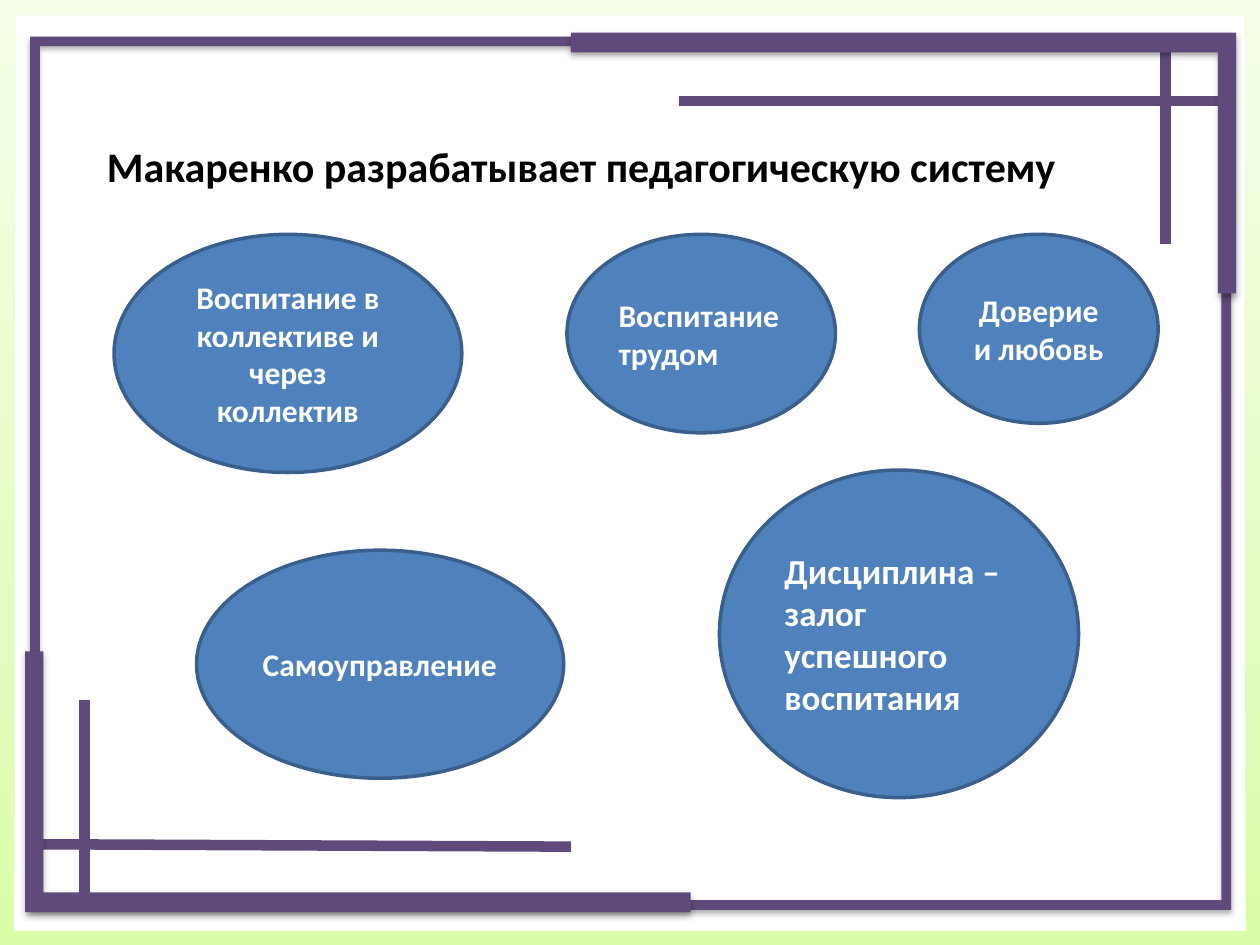
from copy import deepcopy

from lxml import etree
from pptx import Presentation
from pptx import util as u
from pptx.dml.color import RGBColor
from pptx.enum import shapes, text
from pptx.oxml.ns import qn

Pt = u.Pt
PURPLE = RGBColor(0x60, 0x4A, 0x7B)
BLUE = RGBColor(0x4F, 0x81, 0xBD)
DARK_BLUE = RGBColor(0x3A, 0x5F, 0x8C)
WHITE = RGBColor(0xFF, 0xFF, 0xFF)
BLACK = RGBColor(0, 0, 0)
GREENS = [(0, RGBColor(0xDA, 0xFD, 0xA7)),
          (0.35, RGBColor(0xE4, 0xFC, 0xC2)),
          (1, RGBColor(0xF5, 0xFF, 0xE7))]
MSO = shapes.MSO_SHAPE
LEFT, CENTER = text.PP_ALIGN.LEFT, text.PP_ALIGN.CENTER


def add_plain(kind, box):
    """Add a preset shape without outline or shadow."""
    sp = s.shapes.add_shape(kind, *map(Pt, box))
    sp.shadow.inherit = False
    sp.line.fill.background()
    return sp


def write(sp, words, size=18, color=WHITE, align=LEFT, anchor=text.MSO_ANCHOR.MIDDLE):
    tf = sp.text_frame
    tf.word_wrap = True
    tf.vertical_anchor = anchor
    p = tf.paragraphs[0]
    p.alignment = align
    r = p.add_run()
    r.text = words
    r.font.name = "Calibri"
    r.font.size = Pt(size)
    r.font.bold = True
    r.font.color.rgb = color


prs = Presentation()
prs.slide_width, prs.slide_height = Pt(720), Pt(540)
s = prs.slides.add_slide(prs.slide_layouts[6])
s.background.fill.solid()
s.background.fill.fore_color.rgb = WHITE

# Pale green border around the slide
border = add_plain(MSO.FRAME, (0, 0, 720, 540))
border.adjustments[0] = 0.015
border.fill.gradient()
border.fill.gradient_angle = 90
stops = border._element.spPr.find(qn("a:gradFill")).find(qn("a:gsLst"))
stops.insert(1, deepcopy(stops[0]))
for stop, (position, color) in zip(border.fill.gradient_stops, GREENS):
    stop.position = position
    stop.color.rgb = color

# Purple frame, crossing lines and heavy corners
frame = add_plain(MSO.FRAME, (17.3, 20.9, 686.2, 499))
frame.adjustments[0] = 0.011

for x1, y1, x2, y2 in [(48.2, 400.3, 48.2, 514.1), (666, 25.9, 666, 139.7),
                       (17.3, 482.4, 326.2, 483.8), (388.1, 57.6, 697.7, 57.6)]:
    line = s.shapes.add_connector(shapes.MSO_CONNECTOR.STRAIGHT,
                                  Pt(x1), Pt(y1), Pt(x2), Pt(y2))
    line.line.color.rgb = PURPLE
    line.line.width = Pt(6)
    etree.SubElement(line._element.spPr, qn("a:effectLst"))

# python-pptx has no member for the "corner" preset, so it is set in the XML
corners = [add_plain(MSO.RECTANGLE, (x, y, 380.2, 149))
           for x, y in [(14.4, 372.2), (326.2, 18.7)]]
corners[1].rotation = 180
for corner in corners:
    geometry = corner._element.spPr.find(qn("a:prstGeom"))
    geometry.set("prst", "corner")
    for name, value in [("adj1", 7500), ("adj2", 7000)]:
        etree.SubElement(geometry.find(qn("a:avLst")), qn("a:gd"),
                         name=name, fmla=f"val {value}")

for sp in [frame, *corners]:
    sp.fill.solid()
    sp.fill.fore_color.rgb = PURPLE
    effects = sp._element.spPr.find(qn("a:effectLst"))
    shadow = etree.SubElement(effects, qn("a:outerShdw"), blurRad=str(int(Pt(3.5))),
                              dist=str(int(Pt(2.2))), dir="5400000", rotWithShape="0")
    shade = etree.SubElement(shadow, qn("a:srgbClr"), val="000000")
    etree.SubElement(shade, qn("a:alpha"), val="32000")

title = s.shapes.add_textbox(Pt(54), Pt(77), Pt(612), Pt(36))
write(title, "Макаренко разрабатывает педагогическую систему",
      size=24, color=BLACK, anchor=text.MSO_ANCHOR.TOP)

# Principles of the system
for box, words, size, align in [
    ((65.2, 133.9, 198.7, 136.1), "Воспитание в коллективе и через коллектив", 18, CENTER),
    ((112.3, 314.4, 209.8, 130.3), "Самоуправление", 18, LEFT),
    ((525.4, 133.9, 136.4, 108), "Доверие и любовь", 18, CENTER),
    ((324, 133.9, 153.4, 113.4), "Воспитание трудом", 18, LEFT),
    ((411.1, 268.6, 205.2, 187.2), "Дисциплина – залог успешного воспитания", 20, LEFT),
]:
    sp = add_plain(MSO.OVAL, box)
    sp.fill.solid()
    sp.fill.fore_color.rgb = BLUE
    sp.line.color.rgb = DARK_BLUE
    sp.line.width = Pt(2)
    write(sp, words, size=size, align=align)

prs.save("out.pptx")
